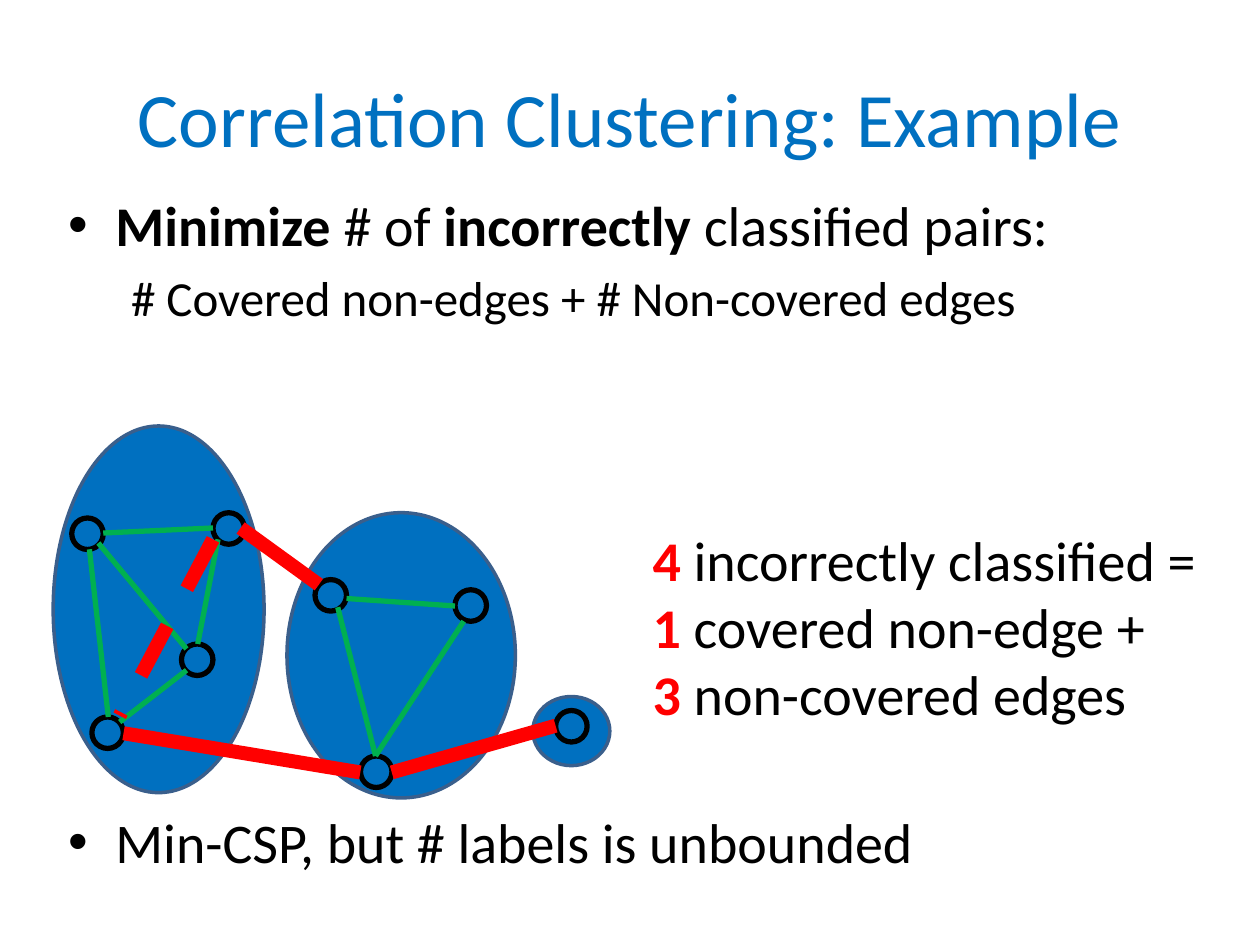
from pptx import Presentation
from pptx.dml.color import RGBColor
from pptx.enum.dml import MSO_LINE
from pptx.enum.shapes import MSO_CONNECTOR as Connector, MSO_SHAPE as Shape
from pptx.oxml import parse_xml
from pptx.oxml.ns import nsdecls
from pptx.util import Pt

BLUE, GREEN, RED, BLACK, OUTLINE = "0070C0", "00B050", "FF0000", "000000", "3A5F8C"
NODE_SIZE = 18

CLUSTERS = [(304.5, 398, 44, 39.5), (30.4, 243.4, 120.5, 209.5), (164, 293, 130.5, 163)]
NODES = [(50, 305), (61.5, 418.7), (130.7, 302), (269, 346),
         (326.5, 415), (112.7, 377), (215, 441), (189, 340.2)]
COVERED_EDGES = [
    (59, 304.6, 121.7, 301.7), (113, 368, 124.6, 308.2),
    (61.9, 409.7, 51.1, 313.9), (68.4, 412.6, 106.6, 383),
    (56.2, 310.3, 106.6, 370.8), (198, 342, 260, 346.3),
    (193, 347, 214.6, 432), (265, 355, 214.6, 432)]
NON_COVERED_EDGES = [
    (182.2, 334.1, 137.5, 301.7), (205.9, 441.4, 70.6, 419),
    (317.5, 414.7, 223.9, 441.4)]
COVERED_NON_EDGE = (121.7, 308.2, 68.4, 409)


def color(value):
    """Turn a hex string into a colour."""
    return RGBColor.from_string(value)


def place(shape, left, top, width, height):
    """Position and size a shape in points."""
    shape.left, shape.top = Pt(left), Pt(top)
    shape.width, shape.height = Pt(width), Pt(height)


def add_ellipse(slide, left, top, width, height, line_color, line_width):
    """Draw a blue outlined ellipse."""
    shape = slide.shapes.add_shape(
        Shape.OVAL, Pt(left), Pt(top), Pt(width), Pt(height))
    shape.shadow.inherit = False
    shape.fill.solid()
    shape.fill.fore_color.rgb = color(BLUE)
    shape.line.color.rgb = color(line_color)
    shape.line.width = Pt(line_width)


def add_edge(slide, ends, line_color, line_width, dash=None):
    """Draw a straight edge between two points."""
    edge = slide.shapes.add_connector(Connector.STRAIGHT, *map(Pt, ends))
    edge.line.color.rgb = color(line_color)
    edge.line.width = Pt(line_width)
    if dash:
        edge.line.dash_style = dash
    edge._element.spPr.append(parse_xml(f"<a:effectLst {nsdecls('a')}/>"))


def add_runs(paragraph, pieces, size):
    """Fill a paragraph with (text, bold, colour) pieces."""
    for text, bold, text_color in pieces:
        run = paragraph.add_run()
        run.text = text
        run.font.name = "Calibri"
        run.font.size = Pt(size)
        run.font.bold = bold
        run.font.color.rgb = color(text_color)


def fill_title(title):
    """Write the centred slide title."""
    place(title, 36, 21.6, 648, 90)
    add_runs(title.text_frame.paragraphs[0],
             [("Correlation Clustering: Example", False, BLUE)], 44)


def fill_body(body):
    """Write the objective above and the remark below the graph."""
    place(body, 31.7, 105.1, 648, 422.6)
    frame = body.text_frame
    objective = frame.paragraphs[0]
    add_runs(objective, [("Minimize ", True, BLACK), ("# of ", False, BLACK),
                         ("incorrectly ", True, BLACK),
                         ("classified pairs:", False, BLACK)], 32)
    formula = frame.add_paragraph()
    formula.level = 1
    properties = formula._p.get_or_add_pPr()
    properties.set("marL", str(Pt(36)))
    properties.set("indent", "0")
    properties.append(parse_xml(f"<a:buNone {nsdecls('a')}/>"))
    add_runs(formula, [("# Covered non-edges + # Non-covered edges", False, BLACK)], 28)
    remark = frame.add_paragraph()
    remark.space_before = Pt(275)
    add_runs(remark, [("Min-CSP, but # labels is unbounded", False, BLACK)], 32)


def add_count(slide):
    """Write the count of misclassified pairs beside the graph."""
    box = slide.shapes.add_textbox(Pt(365.8), Pt(296.6), Pt(354.2), Pt(123.8))
    frame = box.text_frame
    frame.word_wrap = True
    lines = [("4", " incorrectly classified ="), ("1", " covered non-edge +"),
             ("3", " non-covered edges")]
    for index, (number, label) in enumerate(lines):
        paragraph = frame.add_paragraph() if index else frame.paragraphs[0]
        add_runs(paragraph, [(number, True, RED), (label, False, BLACK)], 32)


def add_graph(slide):
    """Draw the clusters, their nodes and all edges."""
    for cluster in CLUSTERS:
        add_ellipse(slide, *cluster, OUTLINE, 2)
    for x, y in NODES:
        add_ellipse(slide, x - NODE_SIZE / 2, y - NODE_SIZE / 2,
                    NODE_SIZE, NODE_SIZE, BLACK, 3)
    for ends in COVERED_EDGES:
        add_edge(slide, ends, GREEN, 3)
    for ends in NON_COVERED_EDGES:
        add_edge(slide, ends, RED, 8)
    add_edge(slide, COVERED_NON_EDGE, RED, 8, MSO_LINE.DASH)


def main():
    """Build and save the slide."""
    presentation = Presentation()
    presentation.slide_width, presentation.slide_height = Pt(720), Pt(540)
    slide = presentation.slides.add_slide(presentation.slide_layouts[1])
    fill_title(slide.shapes.title)
    fill_body(slide.placeholders[1])
    add_graph(slide)
    add_count(slide)
    presentation.save("out.pptx")


if __name__ == "__main__":
    main()
